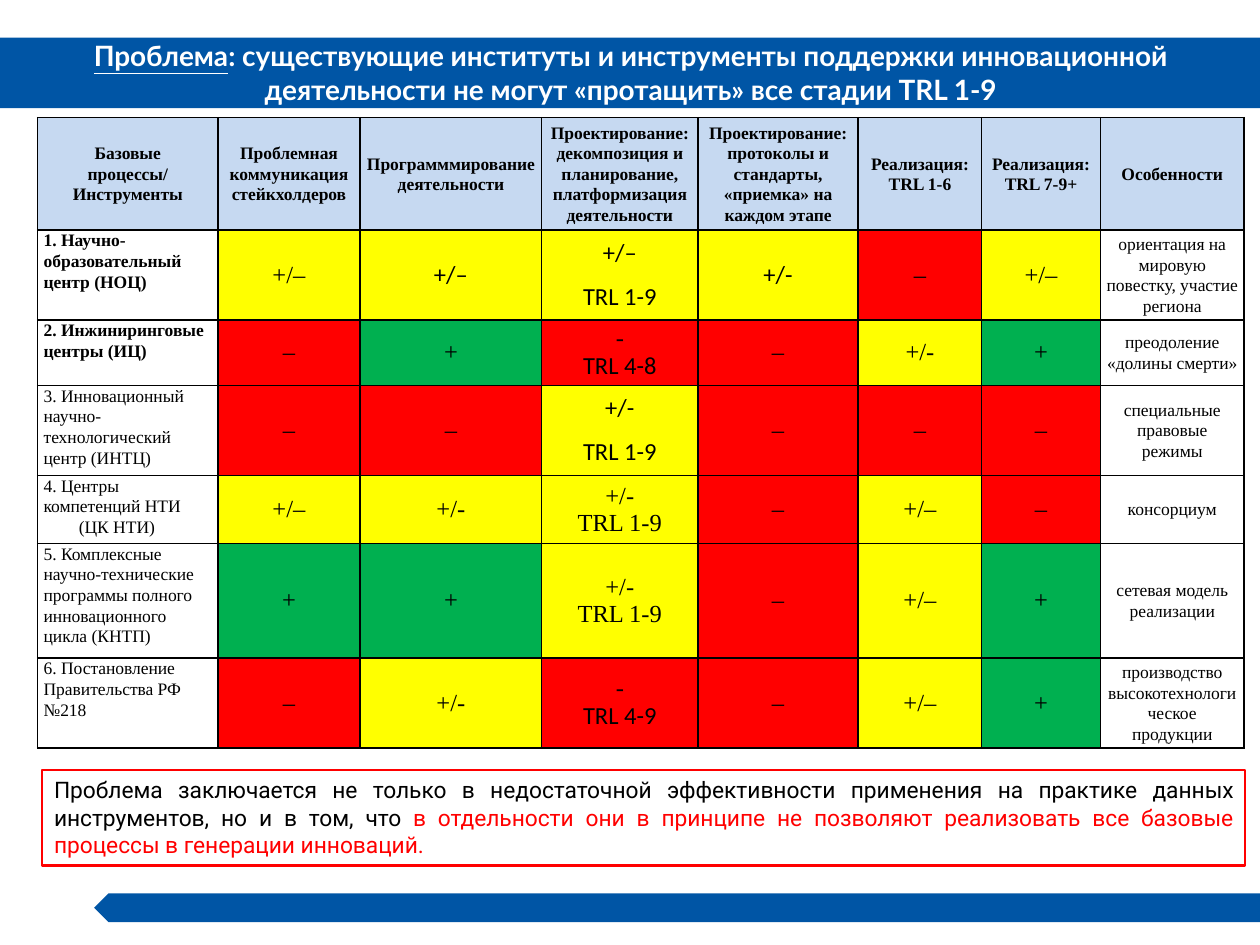
from dataclasses import dataclass

from lxml.etree import SubElement
from pptx import Presentation
from pptx.dml.color import RGBColor as Rgb
from pptx.enum.shapes import MSO_SHAPE as Kind
from pptx.enum.text import MSO_ANCHOR as Anchor, MSO_AUTO_SIZE as Fit, PP_ALIGN as Align
from pptx.oxml.ns import qn
from pptx.util import Cm, Pt


@dataclass(frozen=True)
class Theme:
    blue: str = "0055A5"
    pale: str = "C6D9F1"
    white: str = "FFFFFF"
    black: str = "000000"
    red: str = "FF0000"
    gold: str = "FFFF00"
    green: str = "00B050"
    head: str = "Lato"
    grid: str = "Times New Roman"
    sans: str = "Calibri"
    note: str = "Roboto"
    title: int = 16
    small: int = 10
    mark: int = 14
    body: int = 13


T = Theme()

COLS = [3.63, 2.87, 3.66, 3.15, 3.23, 2.49, 2.39, 2.9]
ROWS = [2.26, 1.81, 1.32, 1.81, 1.37, 2.31, 1.81]

HEADS = [
    "Базовые\nпроцессы/\nИнструменты",
    "Проблемная коммуникация стейкхолдеров",
    "Программмирование деятельности",
    "Проектирование:\nдекомпозиция и\nпланирование,\nплатформизация\nдеятельности",
    "Проектирование:\nпротоколы и\nстандарты,\n«приемка» на\nкаждом этапе",
    "Реализация:\nTRL 1-6",
    "Реализация:\nTRL 7-9+",
    "Особенности",
]

# Tool, marks for each process, feature
TOOLS = [
    ("1. Научно-образовательный центр (НОЦ)",
     ["+/–", "+/–", "+/–\nTRL 1-9", "+/-", "–", "+/–"],
     "ориентация на мировую повестку, участие региона"),
    ("2. Инжиниринговые центры (ИЦ)",
     ["–", "+", "-\nTRL 4-8", "–", "+/-", "+"],
     "преодоление «долины смерти»"),
    ("3. Инновационный научно-технологический центр (ИНТЦ)",
     ["–", "–", "+/-\nTRL 1-9", "–", "–", "–"],
     "специальные правовые режимы"),
    ("4. Центры компетенций НТИ\n(ЦК НТИ)",
     ["+/–", "+/-", "+/-\nTRL 1-9", "–", "+/–", "–"],
     "консорциум"),
    ("5. Комплексные научно-технические программы полного инновационного цикла (КНТП)",
     ["+", "+", "+/-\nTRL 1-9", "–", "+/–", "+"],
     "сетевая модель реализации"),
    ("6. Постановление Правительства РФ №218",
     ["–", "+/-", "-\nTRL 4-9", "–", "+/–", "+"],
     "производство высокотехнологическое продукции"),
]
SPACED = {(1, 2), (1, 3), (1, 4), (3, 3)}  # sans cells with space after
MIXED = {(2, 3), (6, 3)}  # only the TRL line is sans


def add_run(para, text, font, size, color, bold=False, under=False):
    run = para.add_run()
    run.text = text
    run.font.name = font
    run.font.size = Pt(size)
    run.font.color.rgb = Rgb.from_string(color)
    run.font.bold = bold
    run.font.underline = under


def add_block(slide, kind, box, fill, line=None):
    shape = slide.shapes.add_shape(kind, *map(Cm, box))
    shape.shadow.inherit = False
    shape.fill.solid()
    shape.fill.fore_color.rgb = Rgb.from_string(fill)
    if line:
        shape.line.color.rgb = Rgb.from_string(line)
        shape.line.width = Pt(1.25)
    else:
        shape.line.fill.background()
    return shape


def add_bars(slide):
    add_block(slide, Kind.RECTANGLE, (0, 0.76, 25.4, 1.42), T.blue)
    foot = add_block(slide, Kind.PENTAGON, (1.9, 18.01, 23.5, 0.58), T.blue)
    foot._element.spPr.find(qn("a:xfrm")).set("flipH", "1")


def add_title(slide):
    frame = slide.shapes.add_textbox(Cm(0.53), Cm(0.64), Cm(24.38), Cm(1.63)).text_frame
    frame.word_wrap = True
    frame.auto_size = Fit.SHAPE_TO_FIT_TEXT
    frame.vertical_anchor = Anchor.MIDDLE
    para = frame.paragraphs[0]
    para.alignment = Align.CENTER
    add_run(para, "Проблема", T.head, T.title, T.white, True, True)
    add_run(para, ": существующие институты и инструменты поддержки инновационной "
            "деятельности не могут «протащить» все стадии TRL 1-9",
            T.head, T.title, T.white, True)


def style_cell(cell, fill):
    cell.margin_left = cell.margin_right = Cm(0.12)
    cell.margin_top = cell.margin_bottom = 0
    # Borders come before the fill in the cell properties
    props = cell._tc.get_or_add_tcPr()
    for side in ("lnL", "lnR", "lnT", "lnB"):
        edge = SubElement(props, qn(f"a:{side}"), w=str(Pt(1)))
        paint = SubElement(edge, qn("a:solidFill"))
        SubElement(paint, qn("a:srgbClr"), val=T.black)
    if fill:
        cell.fill.solid()
        cell.fill.fore_color.rgb = Rgb.from_string(fill)
    else:
        cell.fill.background()


def fill_cell(cell, text, fill=None, fonts=(T.grid,), size=T.small, bold=False,
              align=Align.CENTER, lead=1.07, after=0):
    style_cell(cell, fill)
    cell.vertical_anchor = Anchor.TOP if align == Align.LEFT else Anchor.MIDDLE
    frame = cell.text_frame
    for i, line in enumerate(text.split("\n")):
        para = frame.add_paragraph() if i else frame.paragraphs[0]
        para.alignment = align
        para.line_spacing = lead
        para.space_after = Pt(after)
        if i and align == Align.LEFT:
            para._p.get_or_add_pPr().set("marL", str(Cm(0.71)))
        add_run(para, line, fonts[min(i, len(fonts) - 1)], size, T.black, bold)


def fill_mark(cell, text, place):
    sign = text.split("\n")[0]
    fill = T.gold if "/" in sign else T.green if sign == "+" else T.red
    if place in SPACED:
        fonts = (T.sans,)
    elif place in MIXED:
        fonts = (T.grid, T.sans)
    else:
        fonts = (T.grid,)
    fill_cell(cell, text, fill, fonts, T.mark, lead=1.0,
              after=8 if place in SPACED else 0)


def add_grid(slide):
    frame = slide.shapes.add_table(len(ROWS), len(COLS), Cm(0.76), Cm(2.37),
                                   Cm(sum(COLS)), Cm(sum(ROWS)))
    grid = frame.table
    for col, width in zip(grid.columns, COLS):
        col.width = Cm(width)
    for row, height in zip(grid.rows, ROWS):
        row.height = Cm(height)
    for c, text in enumerate(HEADS):
        fill_cell(grid.cell(0, c), text, T.pale, bold=True)
    for r, (tool, marks, trait) in enumerate(TOOLS, 1):
        fill_cell(grid.cell(r, 0), tool, bold=r < 3, align=Align.LEFT)
        for c, text in enumerate(marks, 1):
            fill_mark(grid.cell(r, c), text, (r, c))
        fill_cell(grid.cell(r, len(COLS) - 1), trait)


def add_note(slide):
    box = add_block(slide, Kind.RECTANGLE, (0.84, 15.52, 24.26, 1.93), T.white, T.red)
    frame = box.text_frame
    frame.word_wrap = True
    frame.auto_size = Fit.SHAPE_TO_FIT_TEXT
    frame.vertical_anchor = Anchor.TOP
    para = frame.paragraphs[0]
    para.alignment = Align.JUSTIFY
    add_run(para, "Проблема заключается не только в недостаточной эффективности применения "
            "на практике данных инструментов, но и в том, что ", T.note, T.body, T.black)
    add_run(para, "в отдельности они в принципе не позволяют реализовать все базовые "
            "процессы в генерации инноваций.", T.note, T.body, T.red)


def main():
    deck = Presentation()
    deck.slide_width, deck.slide_height = Cm(25.4), Cm(19.05)
    slide = deck.slides.add_slide(deck.slide_layouts[6])
    add_bars(slide)
    add_title(slide)
    add_grid(slide)
    add_note(slide)
    deck.save("out.pptx")


if __name__ == "__main__":
    main()
